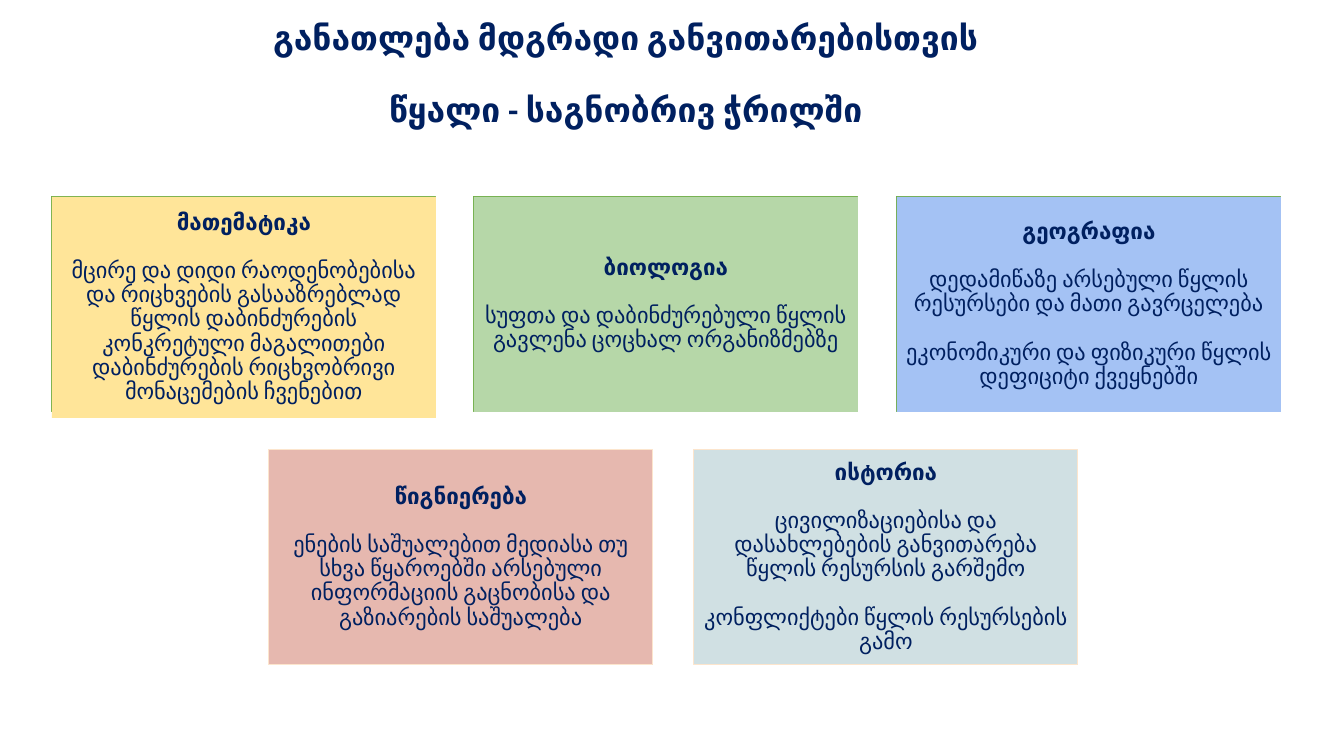
from pptx import Presentation
from pptx.dml.color import RGBColor
from pptx.enum.shapes import MSO_SHAPE
from pptx.enum.text import MSO_ANCHOR, PP_ALIGN
from pptx.util import Emu, Pt

RECTANGLE = MSO_SHAPE.RECTANGLE
TOP, MIDDLE = MSO_ANCHOR.TOP, MSO_ANCHOR.MIDDLE
CENTER = PP_ALIGN.CENTER

TITLE = ["განათლება მდგრადი განვითარებისთვის", "წყალი - საგნობრივ ჭრილში"]

UPPER_SUBJECTS = [
    ("მათემატიკა", "FFE599", 221, [
        ["მცირე და დიდი რაოდენობებისა და რიცხვების გასააზრებლად",
         "წყლის დაბინძურების კონკრეტული მაგალითები დაბინძურების რიცხვობრივი მონაცემების ჩვენებით"]]),
    ("ბიოლოგია", "B6D7A8", 215, [
        ["სუფთა და დაბინძურებული წყლის გავლენა ცოცხალ ორგანიზმებზე"]]),
    ("გეოგრაფია", "A4C2F4", 215, [
        ["დედამიწაზე არსებული წყლის რესურსები და მათი გავრცელება"],
        ["ეკონომიკური და ფიზიკური წყლის დეფიციტი ქვეყნებში"]]),
]
LOWER_SUBJECTS = [
    ("წიგნიერება", "E6B8AF", 215, [
        ["ენების საშუალებით მედიასა თუ სხვა წყაროებში არსებული ინფორმაციის გაცნობისა და გაზიარების საშუალება"]]),
    ("ისტორია", "D0E0E3", 215, [
        ["ცივილიზაციებისა და დასახლებების განვითარება წყლის რესურსის გარშემო"],
        ["კონფლიქტები წყლის რესურსების გამო"]]),
]

NAVY, BACKING, GREEN, CREAM = "002060", "ABA59D", "70AD47", "FCE5CD"
FONT = "Calibri"
CARD_WIDTH, CARD_HEIGHT = 384, 215
LINE_SPACING = 0.9
BLANK_LINE = 1.2 * LINE_SPACING


def px(length):
    return Emu(round(length * 914400 / 100.8))


def color(value):
    return RGBColor.from_string(value)


def set_frame(box, anchor, side, end):
    frame = box.text_frame
    frame.word_wrap = True
    frame.vertical_anchor = anchor
    frame.margin_left = frame.margin_right = px(side)
    frame.margin_top = frame.margin_bottom = px(end)
    return frame


def write(frame, text, size=16, bold=False, gap=False):
    para = frame.paragraphs[0]
    if para.runs:
        para = frame.add_paragraph()
    para.alignment = CENTER
    para.line_spacing = LINE_SPACING
    para.space_before = Pt(round(size * BLANK_LINE, 1) if gap else 0)
    span = para.add_run()
    span.text = text
    span.font.name = FONT
    span.font.size = Pt(size)
    span.font.bold = bold
    span.font.color.rgb = color(NAVY)


def add_card(page, left, top, height, fill, line=None):
    box = page.shapes.add_shape(RECTANGLE, px(left), px(top), px(CARD_WIDTH), px(height))
    box.shadow.inherit = False
    box.fill.solid()
    box.fill.fore_color.rgb = color(fill)
    if line:
        box.line.color.rgb = color(line)
        box.line.width = Pt(0.75)
    else:
        box.line.fill.background()
    return box


def add_row(page, subjects, left, top, step, line=None, backed=False):
    for index, (name, fill, height, groups) in enumerate(subjects):
        card_left = left + round(index * step)
        if backed:
            add_card(page, card_left, top, CARD_HEIGHT, BACKING, GREEN)
        card = add_card(page, card_left, top, height, fill, line)
        frame = set_frame(card, MIDDLE, 7, 7)
        write(frame, name, bold=True)
        for group in groups:
            for order, text in enumerate(group):
                write(frame, text, gap=order == 0)


def main():
    deck = Presentation()
    deck.slide_width, deck.slide_height = px(1344), px(756)
    page = deck.slides.add_slide(deck.slide_layouts[6])

    title = page.shapes.add_textbox(px(172), px(16), px(908), px(91))
    frame = set_frame(title, TOP, 10, 5)
    for order, text in enumerate(TITLE):
        write(frame, text, size=24, bold=True, gap=order > 0)

    add_row(page, UPPER_SUBJECTS, 52, 197, 422.5, backed=True)
    add_row(page, LOWER_SUBJECTS, 269, 450, 425, line=CREAM)
    deck.save("out.pptx")


if __name__ == "__main__":
    main()
